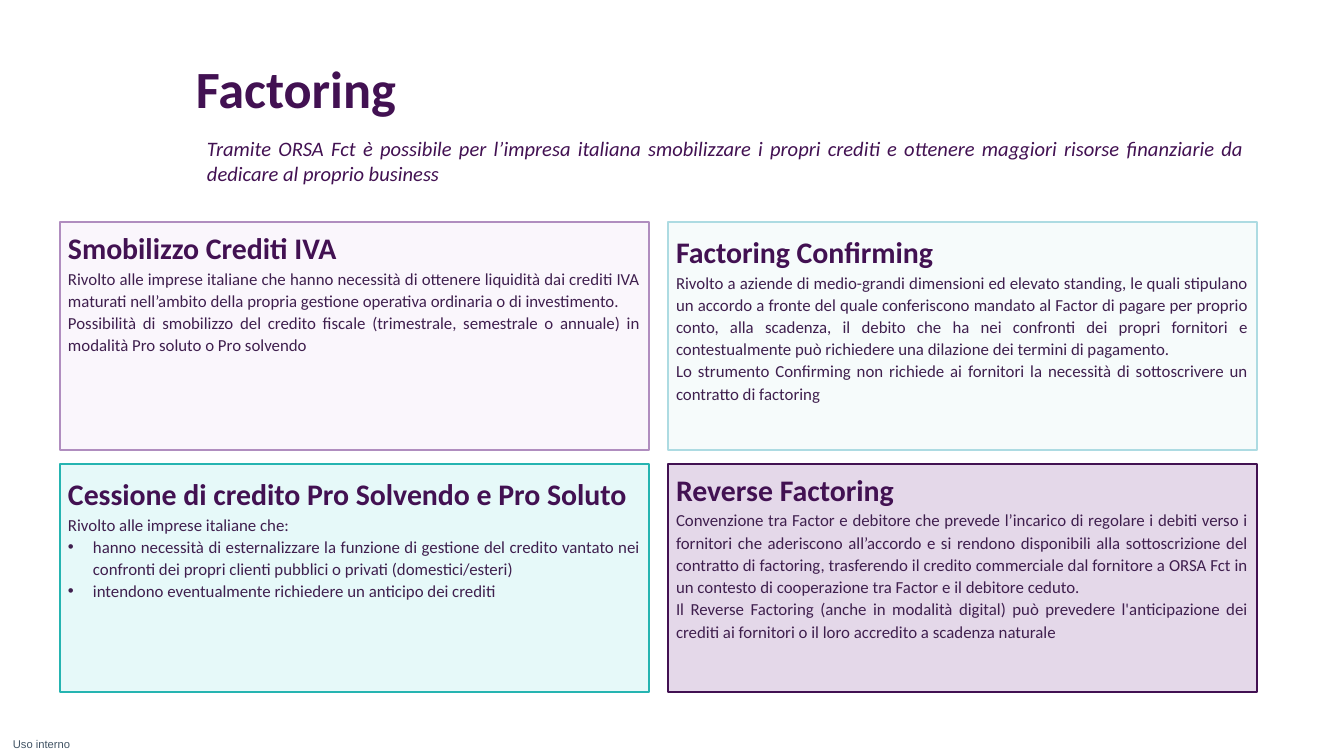
from dataclasses import dataclass

from lxml.etree import SubElement
from pptx import Presentation
from pptx.dml.color import RGBColor
from pptx.enum.shapes import MSO_SHAPE as Preset
from pptx.enum.text import MSO_ANCHOR as Anchor, MSO_AUTO_SIZE as AutoSize, PP_ALIGN as Align
from pptx.oxml.ns import qn
from pptx.util import Pt

EMU_PER_PX = 914400 / 134.4


@dataclass(frozen=True)
class Theme:
    font: str = "Calibri"
    label_font: str = "Arial"
    purple: str = "421152"
    text: str = "3F1F4E"
    label: str = "415364"
    title_size: int = 28
    intro_size: int = 11
    heading_size: int = 16
    body_size: int = 9
    label_size: int = 6


THEME = Theme()

CARDS = [
    {"heading": "Smobilizzo Crediti IVA", "fill": "F6EEFA", "line": "B08DBF",
     "cell": (0, 0), "inset": 12, "height": 163,
     "body": ["Rivolto alle imprese italiane che hanno necessità di ottenere liquidità dai crediti IVA "
              "maturati nell’ambito della propria gestione operativa ordinaria o di investimento.",
              "Possibilità di smobilizzo del credito fiscale (trimestrale, semestrale o annuale) in "
              "modalità Pro soluto o Pro solvendo"]},
    {"heading": "Factoring Confirming", "fill": "EFF8F9", "line": "ADDBE2",
     "cell": (1, 0), "inset": 16, "height": 187,
     "body": ["Rivolto a aziende di medio-grandi dimensioni ed elevato standing, le quali stipulano un "
              "accordo a fronte del quale conferiscono mandato al Factor di pagare per proprio conto, alla "
              "scadenza, il debito che ha nei confronti dei propri fornitori e contestualmente può "
              "richiedere una dilazione dei termini di pagamento.",
              "Lo strumento Confirming non richiede ai fornitori la necessità di sottoscrivere un "
              "contratto di factoring"]},
    {"heading": "Cessione di credito Pro Solvendo e Pro Soluto", "fill": "CEF5F4", "line": "25B4B1",
     "cell": (0, 1), "inset": 16, "height": 195,
     "body": ["Rivolto alle imprese italiane che:"],
     "bullets": ["hanno necessità di esternalizzare la funzione di gestione del credito vantato nei "
                 "confronti dei propri clienti pubblici o privati (domestici/esteri)",
                 "intendono eventualmente richiedere un anticipo dei crediti"]},
    {"heading": "Reverse Factoring", "fill": "CAB3D4", "line": "421152",
     "cell": (1, 1), "inset": 12, "height": 207,
     "body": ["Convenzione tra Factor e debitore che prevede l’incarico di regolare i debiti verso i "
              "fornitori che aderiscono all’accordo e si rendono disponibili alla sottoscrizione del "
              "contratto di factoring, trasferendo il credito commerciale dal fornitore a ORSA Fct in un "
              "contesto di cooperazione tra Factor e il debitore ceduto.",
              "Il Reverse Factoring (anche in modalità digital) può prevedere l'anticipazione dei "
              "crediti ai fornitori o il loro accredito a scadenza naturale"]},
]


def px(length):
    return round(length * EMU_PER_PX)


def place(holder, box):
    holder.left, holder.top, holder.width, holder.height = map(px, box)


def prepare_frame(frame, anchor=Anchor.TOP, auto_size=AutoSize.NONE):
    frame.margin_left = frame.margin_right = frame.margin_top = frame.margin_bottom = 0
    frame.word_wrap = True
    frame.auto_size = auto_size
    frame.vertical_anchor = anchor


def write_paragraph(paragraph, text, size, color, font=THEME.font, align=Align.JUSTIFY,
                    spacing=1.0, bold=False, italic=False, bullet=False):
    properties = paragraph._p.get_or_add_pPr()
    indent = px(25) if bullet else 0
    properties.set("marL", str(indent))
    properties.set("indent", str(-indent))
    if bullet:
        SubElement(properties, qn("a:buFont"), typeface="Arial")
        SubElement(properties, qn("a:buChar"), char="•")
    else:
        SubElement(properties, qn("a:buNone"))
    paragraph.alignment = align
    paragraph.line_spacing = spacing
    paragraph.space_before = paragraph.space_after = Pt(0)
    run = paragraph.add_run()
    run.text = text
    run.font.name = font
    run.font.size = Pt(size)
    run.font.bold = bold
    run.font.italic = italic
    run.font.color.rgb = RGBColor.from_string(color)


def add_header(slide, box):
    left, top, width, height = box
    title = slide.shapes.title
    place(title, (left, top, 948, 42))
    prepare_frame(title.text_frame)
    write_paragraph(title.text_frame.paragraphs[0], "Factoring", THEME.title_size, THEME.purple,
                    align=Align.LEFT, spacing=0.9, bold=True)

    intro = slide.placeholders[1]
    place(intro, (left + 11, top + 73, width - 11, height - 73))
    prepare_frame(intro.text_frame)
    write_paragraph(intro.text_frame.paragraphs[0],
                    "Tramite ORSA Fct è possibile per l’impresa italiana smobilizzare i propri crediti "
                    "e ottenere maggiori risorse finanziarie da dedicare al proprio business",
                    THEME.intro_size, THEME.purple, italic=True)


def add_card(slide, box, card):
    left, top, width, height = box
    panel = slide.shapes.add_shape(Preset.RECTANGLE, *map(px, box))
    panel.shadow.inherit = False
    panel.fill.solid()
    panel.fill.fore_color.rgb = RGBColor.from_string(card["fill"])
    fill_color = panel._element.spPr.find(qn("a:solidFill")).find(qn("a:srgbClr"))
    SubElement(fill_color, qn("a:alpha"), val="50000")
    panel.line.color.rgb = RGBColor.from_string(card["line"])
    panel.line.width = Pt(1)

    text_box = (left + 8, top + card["inset"], width - 18, card["height"])
    frame = slide.shapes.add_textbox(*map(px, text_box)).text_frame
    prepare_frame(frame, auto_size=AutoSize.SHAPE_TO_FIT_TEXT)
    write_paragraph(frame.paragraphs[0], card["heading"], THEME.heading_size, THEME.purple,
                    spacing=0.9, bold=True)
    for key in ("body", "bullets"):
        for text in card.get(key, []):
            write_paragraph(frame.add_paragraph(), text, THEME.body_size, THEME.text,
                            spacing=1.1, bullet=key == "bullets")


def add_card_grid(slide, box, gap_x=19, gap_y=14):
    left, top, width, height = box
    card_width = (width - gap_x) // 2
    card_height = (height - gap_y) // 2
    for card in CARDS:
        column, row = card["cell"]
        add_card(slide, (left + column * (card_width + gap_x), top + row * (card_height + gap_y),
                         card_width, card_height), card)


def add_classification(slide, box):
    frame = slide.shapes.add_textbox(*map(px, box)).text_frame
    prepare_frame(frame, anchor=Anchor.MIDDLE)
    write_paragraph(frame.paragraphs[0], "Uso interno", THEME.label_size, THEME.label,
                    font=THEME.label_font, align=Align.CENTER)


def main():
    deck = Presentation()
    deck.slide_width, deck.slide_height = px(1344), px(756)
    slide = deck.slides.add_slide(deck.slide_layouts[1])
    add_classification(slide, (0, 738, 83, 13))
    add_header(slide, (196, 63, 1049, 140))
    add_card_grid(slide, (60, 222, 1197, 470))
    deck.save("out.pptx")


if __name__ == "__main__":
    main()
